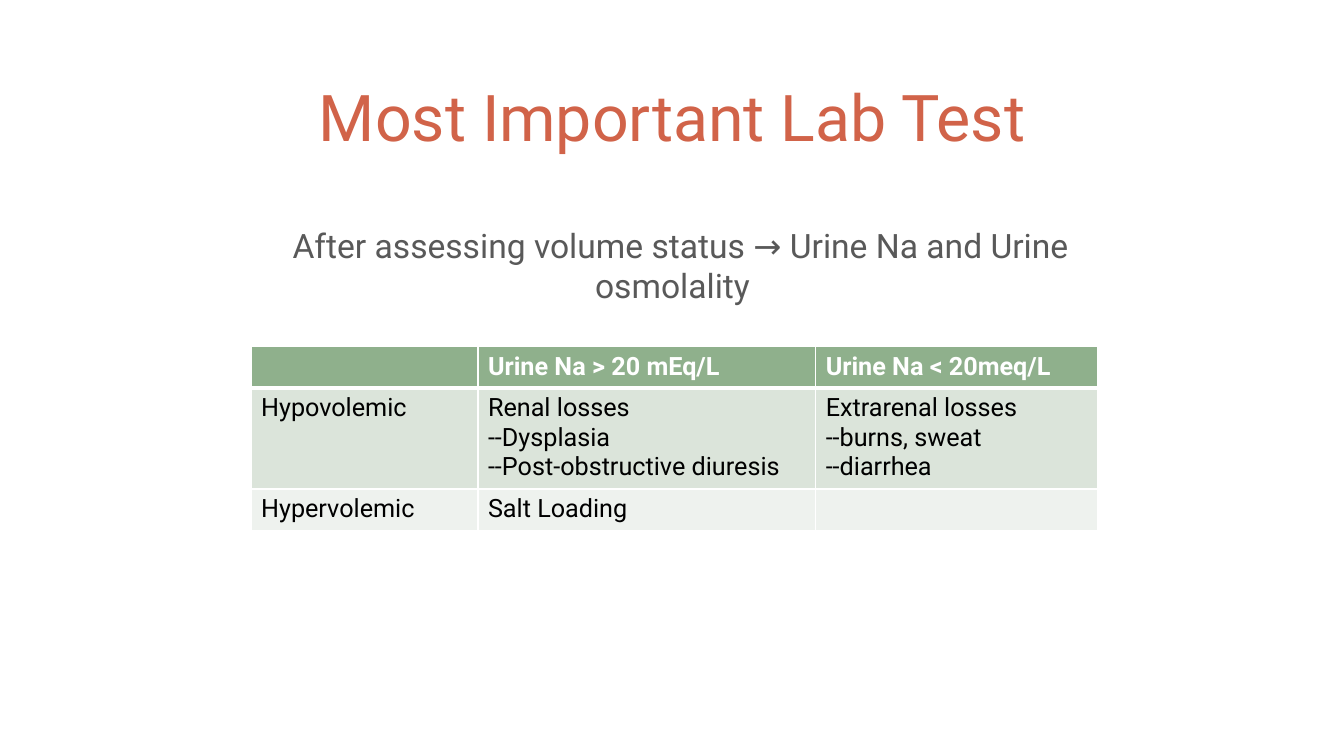
from dataclasses import dataclass

from lxml.etree import SubElement
from pptx import Presentation
from pptx.dml.color import RGBColor
from pptx.enum.text import MSO_ANCHOR as Anchor, PP_ALIGN as Align
from pptx.oxml.ns import qn
from pptx.slide import Slide
from pptx.table import _Cell as Cell
from pptx.text.text import _Paragraph as Paragraph
from pptx.util import Pt

SCALE = 9144
FONT = "Roboto"
WHITE = "FFFFFF"
COLUMN_WIDTHS = (225, 335, 280)


@dataclass(frozen=True)
class Caption:
    text: str
    left: int
    top: int
    width: int
    height: int
    size: int
    color: str
    anchor: Anchor
    space_before: int = 0
    indent: int = 0


@dataclass(frozen=True)
class Row:
    cells: tuple[str, ...]
    height: int
    fill: str
    color: str = "000000"
    bold: bool = False
    top_line: int = 1
    bottom_line: int = 1


CAPTIONS = (
    Caption("Most Important Lab Test", 80, 12, 1173, 146, 46, "D16349", Anchor.BOTTOM),
    Caption("After assessing volume status → Urine Na and Urine osmolality",
            227, 218, 880, 87, 24, "595959", Anchor.TOP, space_before=20, indent=16),
)

ROWS = (
    Row(("", "Urine Na > 20 mEq/L", "Urine Na < 20meq/L"),
        41, "8FB08C", WHITE, bold=True, bottom_line=3),
    Row(("Hypovolemic",
         "Renal losses\n--Dysplasia\n--Post-obstructive diuresis",
         "Extrarenal losses\n--burns, sweat\n--diarrhea"),
        98, "DBE4DA", top_line=3),
    Row(("Hypervolemic", "Salt Loading", ""), 41, "EEF2EE"),
)


def px(length: int) -> int:
    return length * SCALE


def rgb(color: str) -> RGBColor:
    return RGBColor.from_string(color)


def add_span(para: Paragraph, text: str, size: int, color: str, bold: bool = False) -> None:
    span = para.add_run()
    span.text = text
    span.font.name = FONT
    span.font.size = Pt(size)
    span.font.bold = bold
    span.font.color.rgb = rgb(color)


def add_caption(page: Slide, caption: Caption) -> None:
    box = page.shapes.add_textbox(
        px(caption.left), px(caption.top), px(caption.width), px(caption.height))
    frame = box.text_frame
    frame.word_wrap = True
    frame.vertical_anchor = caption.anchor
    para = frame.paragraphs[0]
    para.alignment = Align.CENTER
    para.space_before = Pt(caption.space_before)
    para._p.get_or_add_pPr().set("indent", str(px(caption.indent)))
    add_span(para, caption.text, caption.size, caption.color)


def add_borders(cell: Cell, row: Row) -> None:
    properties = cell._tc.get_or_add_tcPr()
    widths = {"lnL": 1, "lnR": 1, "lnT": row.top_line, "lnB": row.bottom_line}
    for side, width in widths.items():
        line = SubElement(properties, qn(f"a:{side}"), w=str(Pt(width)))
        fill = SubElement(line, qn("a:solidFill"))
        SubElement(fill, qn("a:srgbClr"), val=WHITE)


def fill_cell(cell: Cell, text: str, row: Row) -> None:
    add_borders(cell, row)
    cell.fill.solid()
    cell.fill.fore_color.rgb = rgb(row.fill)
    frame = cell.text_frame
    for index, line in enumerate(text.splitlines()):
        para = frame.add_paragraph() if index else frame.paragraphs[0]
        add_span(para, line, 18, row.color, row.bold)


def add_lab_table(page: Slide) -> None:
    table = page.shapes.add_table(
        len(ROWS), len(COLUMN_WIDTHS), px(249), px(344),
        px(sum(COLUMN_WIDTHS)), px(sum(row.height for row in ROWS))).table
    for column, width in zip(table.columns, COLUMN_WIDTHS):
        column.width = px(width)
    for row_index, row in enumerate(ROWS):
        table.rows[row_index].height = px(row.height)
        for column_index, text in enumerate(row.cells):
            fill_cell(table.cell(row_index, column_index), text, row)


def main() -> None:
    deck = Presentation()
    deck.slide_width, deck.slide_height = px(1333), px(750)
    page = deck.slides.add_slide(deck.slide_layouts[6])
    for caption in CAPTIONS:
        add_caption(page, caption)
    add_lab_table(page)
    deck.save("out.pptx")


if __name__ == "__main__":
    main()
